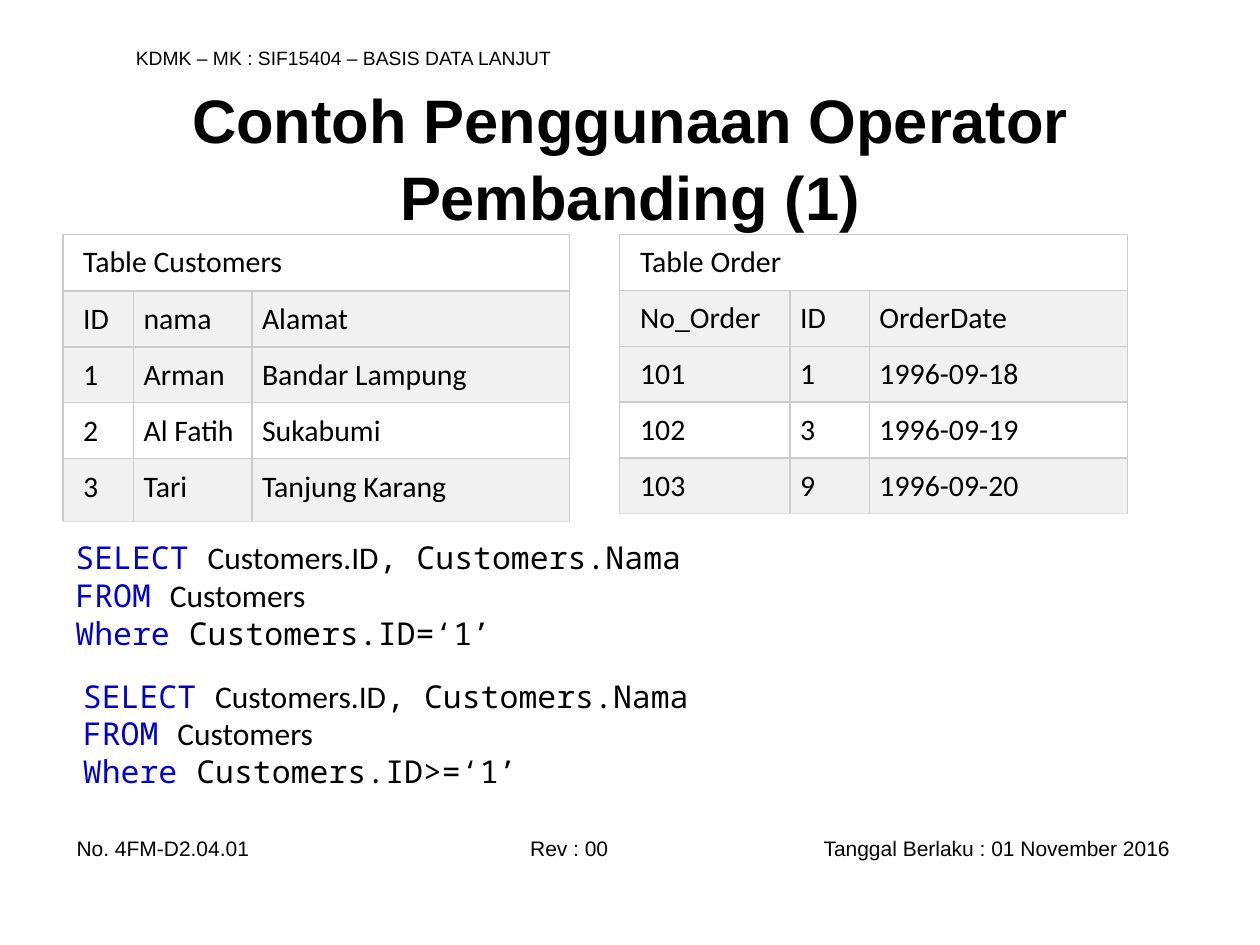
from lxml import etree
from pptx import Presentation
from pptx import util as u
from pptx.dml import color
from pptx.enum import text
from pptx.oxml import ns

BLACK, BLUE, WHITE, GREY = "000000", "0000CD", "FFFFFF", "F1F1F1"
CODE_FONT = "Noto Sans Mono"

CUSTOMERS = [
    ("Table Customers",),
    ("ID", "nama", "Alamat"),
    ("1", "Arman", "Bandar Lampung"),
    ("2", "Al Fatih", "Sukabumi"),
    ("3", "Tari", "Tanjung Karang"),
]
ORDERS = [
    ("Table Order",),
    ("No_Order", "ID", "OrderDate"),
    ("101", "1", "1996-09-18"),
    ("102", "3", "1996-09-19"),
    ("103", "9", "1996-09-20"),
]


def rgb(value):
    """Return the colour for a hex string."""
    return color.RGBColor.from_string(value)


def add_text(paragraph, content, size=18, font="Arial", colour=BLACK, bold=False):
    """Append a formatted run to a paragraph."""
    run = paragraph.add_run()
    run.text = content
    run.font.size = u.Pt(size)
    run.font.name = font
    run.font.bold = bold
    run.font.color.rgb = rgb(colour)


def add_box(slide, left, top, width, height, anchor=text.MSO_ANCHOR.TOP):
    """Add a wrapping text box and return its text frame."""
    box = slide.shapes.add_textbox(*map(u.Inches, (left, top, width, height)))
    frame = box.text_frame
    frame.word_wrap = True
    frame.vertical_anchor = anchor
    return frame


def set_tabs(paragraph, stops):
    """Give a paragraph tab stops from (inches, alignment) pairs."""
    tabs = etree.SubElement(paragraph._p.get_or_add_pPr(), ns.qn("a:tabLst"))
    for position, alignment in stops:
        etree.SubElement(tabs, ns.qn("a:tab"), pos=str(u.Inches(position)), algn=alignment)


def add_title(slide, content):
    """Place and fill the title placeholder."""
    title = slide.shapes.title
    title.left, title.top, title.width, title.height = map(u.Inches, (0.5, 0.61, 9, 1.25))
    frame = title.text_frame
    frame.word_wrap = True
    frame.auto_size = text.MSO_AUTO_SIZE.NONE
    frame.vertical_anchor = text.MSO_ANCHOR.MIDDLE
    paragraph = frame.paragraphs[0]
    paragraph.alignment = text.PP_ALIGN.CENTER
    paragraph.line_spacing = 1.05
    add_text(paragraph, content, size=35.1, bold=True)


def set_borders(cell, bottom):
    """Draw thin grey borders round a cell, with its own bottom colour."""
    properties = cell._tc.get_or_add_tcPr()
    sides = {"lnL": "CCCCCC", "lnR": "CCCCCC", "lnT": "CCCCCC", "lnB": bottom}
    for index, (side, colour) in enumerate(sides.items()):
        line = etree.Element(ns.qn(f"a:{side}"), w=str(u.Pt(0.75)))
        fill = etree.SubElement(line, ns.qn("a:solidFill"))
        etree.SubElement(fill, ns.qn("a:srgbClr"), val=colour)
        properties.insert(index, line)


def format_cell(cell, fill, first, last):
    """Set the fill, margins and borders of a cell."""
    cell.fill.solid()
    cell.fill.fore_color.rgb = rgb(fill)
    cell.margin_left = u.Inches(0.16 if first else 0.08)
    cell.margin_right = cell.margin_top = cell.margin_bottom = u.Inches(0.08)
    set_borders(cell, "DDDDDD" if last else "CCCCCC")


def add_data_table(slide, left, rows, widths, heights):
    """Add a table whose first row is a caption across all columns."""
    table = slide.shapes.add_table(
        len(rows), len(widths), u.Inches(left), u.Inches(1.86),
        u.Inches(sum(widths)), u.Inches(sum(heights))).table
    for column, width in zip(table.columns, widths):
        column.width = u.Inches(width)
    for row, height in zip(table.rows, heights):
        row.height = u.Inches(height)
    table.cell(0, 0).merge(table.cell(0, len(widths) - 1))
    fills = (WHITE, GREY, GREY, WHITE, GREY)
    for r, (values, fill) in enumerate(zip(rows, fills)):
        for c in range(len(widths)):
            format_cell(table.cell(r, c), fill, c == 0, r == len(rows) - 1)
        for c, value in enumerate(values):
            paragraph = table.cell(r, c).text_frame.paragraphs[0]
            add_text(paragraph, value, size=17, font="Calibri")


def add_query(slide, left, top, condition):
    """Add an SQL query with coloured keywords."""
    frame = add_box(slide, left, top, 8.83, 1.01)
    select = frame.paragraphs[0]
    add_text(select, "SELECT ", font=CODE_FONT, colour=BLUE)
    add_text(select, "Customers.ID", font="Calibri")
    add_text(select, ", Customers.Nama", font=CODE_FONT)
    select.add_line_break()
    add_text(select, "FROM ", font=CODE_FONT, colour=BLUE)
    add_text(select, "Customers", font="Calibri")
    where = frame.add_paragraph()
    add_text(where, "Where ", font=CODE_FONT, colour=BLUE)
    add_text(where, condition, font=CODE_FONT)


def add_header_and_footer(slide):
    """Add the course line above and the document line below."""
    header = add_box(slide, 0.98, 0.31, 8.35, 0.29, text.MSO_ANCHOR.MIDDLE)
    add_text(header.paragraphs[0], "KDMK – MK : SIF15404 – BASIS DATA LANJUT", size=11)
    footer = add_box(slide, 0.51, 6.58, 8.96, 0.3, text.MSO_ANCHOR.MIDDLE).paragraphs[0]
    set_tabs(footer, [(3.91, "ctr"), (8.68, "r")])
    add_text(footer, "No. 4FM-D2.04.01\tRev : 00\tTanggal Berlaku : 01 November 2016", size=12)


def main():
    """Build and save the slide."""
    presentation = Presentation()
    presentation.slide_width, presentation.slide_height = u.Inches(10), u.Inches(7.5)
    slide = presentation.slides.add_slide(presentation.slide_layouts[5])
    add_header_and_footer(slide)
    add_title(slide, "Contoh Penggunaan Operator Pembanding (1)")
    add_data_table(slide, 0.5, CUSTOMERS, (0.56, 0.94, 2.52), (0.45, 0.44, 0.44, 0.44, 0.5))
    add_data_table(slide, 4.92, ORDERS, (1.35, 0.63, 2.05), (0.44,) * 5)
    add_query(slide, 0.5, 4.22, "Customers.ID=‘1’")
    add_query(slide, 0.56, 5.32, "Customers.ID>=‘1’")
    presentation.save("out.pptx")


if __name__ == "__main__":
    main()
